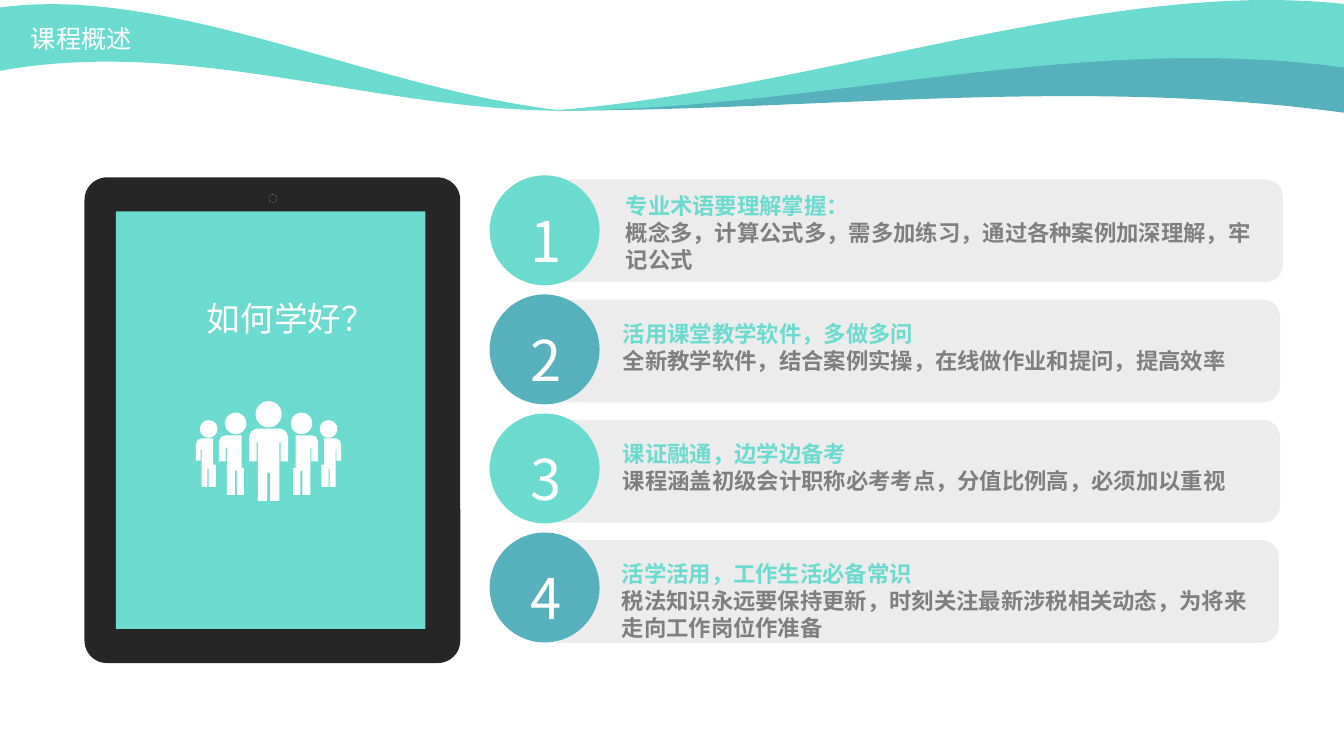
from dataclasses import dataclass
from math import cos, pi, sin

from lxml import etree
from pptx import Presentation
from pptx import util as u
from pptx.dml.color import RGBColor
from pptx.enum import shapes, text
from pptx.oxml.ns import qn


@dataclass(frozen=True)
class Theme:
    font: str = "Noto Sans CJK SC"
    mint: str = "6BDBCF"
    teal: str = "56B1BC"
    dark: str = "262626"
    white: str = "FFFFFF"
    card: str = "D9D9D9"
    grey: str = "7F7F7F"
    title: int = 18
    question: int = 24
    number: int = 40
    body: int = 16


def add_span(para, words, *, font, size, color, bold=False):
    """Add formatted text to a paragraph."""
    span = para.add_run()
    span.text = words
    span.font.name = font
    span.font.size = u.Pt(size)
    span.font.bold = bold
    span.font.color.rgb = RGBColor.from_string(color)
    properties = span.font._element
    etree.SubElement(properties, qn("a:ea")).set("typeface", font)


def bezier(start, first, second, end, steps=40):
    """Points along a cubic curve."""
    weights = [((1 - t) ** 3, 3 * t * (1 - t) ** 2, 3 * t * t * (1 - t), t ** 3)
               for t in (step / steps for step in range(steps + 1))]
    return [tuple(sum(w * point[axis] for w, point in zip(weight, (start, first, second, end)))
                  for axis in (0, 1)) for weight in weights]


def circle(x, y, radius, steps=32):
    angles = [2 * pi * step / steps for step in range(steps)]
    return [(x + radius * cos(a), y + radius * sin(a)) for a in angles]


def mirrored(points):
    return [(-x, y) for x, y in reversed(points)]


class Painter:
    """Draws on one slide; all lengths are centimetres."""

    def __init__(self, slide, theme):
        self.slide, self.theme = slide, theme

    def finish(self, shape, color, alpha=None):
        shape.shadow.inherit = False
        shape.fill.solid()
        shape.fill.fore_color.rgb = RGBColor.from_string(color)
        shape.line.fill.background()
        if alpha is not None:
            for node in shape._element.spPr.iter(qn("a:srgbClr")):
                etree.SubElement(node, qn("a:alpha")).set("val", str(alpha * 1000))

    def preset(self, kind, x, y, width, height, color, alpha=None, corner=None):
        shape = self.slide.shapes.add_shape(
            kind, u.Cm(x), u.Cm(y), u.Cm(width), u.Cm(height))
        if corner is not None:
            shape.adjustments[0] = corner
        self.finish(shape, color, alpha)

    def outline(self, contours, color):
        contours = [[(u.Cm(x), u.Cm(y)) for x, y in points] for points in contours]
        builder = self.slide.shapes.build_freeform(*contours[0][0])
        for index, points in enumerate(contours):
            if index:
                builder.move_to(*points[0])
            builder.add_line_segments(points[1:], close=True)
        self.finish(builder.convert_to_shape(), color)

    def label(self, x, y, width, height, lines, size, bold=False, center=False, spacing=1.27):
        """Lines are pairs of words and colour."""
        box = self.slide.shapes.add_textbox(u.Cm(x), u.Cm(y), u.Cm(width), u.Cm(height))
        frame = box.text_frame
        frame.word_wrap = True
        for index, (words, color) in enumerate(lines):
            para = frame.add_paragraph() if index else frame.paragraphs[0]
            para.line_spacing = u.Pt(size * spacing)
            para.alignment = text.PP_ALIGN.CENTER if center else text.PP_ALIGN.LEFT
            add_span(para, words, font=self.theme.font, size=size, color=color, bold=bold)


THEME = Theme()
KIND = shapes.MSO_SHAPE

# Each wave: colour, upper curve, lower curve
WAVES = [
    (THEME.teal, [(13.94, 2.79), (20.62, 2.26), (27.86, 0.58), (33.87, 1.24)],
     [(33.87, 2.84), (27.18, 1.93), (20.62, 2.79), (13.94, 2.79)]),
    (THEME.mint, [(13.92, 2.79), (20.6, 2.26), (27.86, -0.56), (33.87, 0.1)],
     [(33.87, 1.7), (27.18, 0.79), (20.6, 2.79), (13.92, 2.79)]),
    (THEME.mint, [(14.2, 2.79), (9.37, 2.26), (4.27, -0.43), (-0.08, 0.2)],
     [(-0.08, 1.8), (4.75, 0.89), (9.37, 2.79), (14.2, 2.79)]),
]

# People, as distances from the middle axis of the group
AXIS = 6.77
CENTRE_HALF = [(0.3, 10.8), (0.43, 10.86), (0.49, 11), (0.49, 11.63), (0.3, 11.63),
               (0.3, 11.15), (0.27, 11.15), (0.27, 12.62), (0.04, 12.62), (0.04, 11.91)]
INNER_BODY = [(0.62, 11.79), (0.62, 12.47), (0.8, 12.47), (0.8, 11.86), (0.85, 11.86),
              (0.85, 12.47), (1.05, 12.47), (1.05, 11.28), (1.08, 11.28), (1.08, 11.63),
              (1.25, 11.63), (1.25, 11.13), (1.2, 11.01), (1.08, 10.97), (0.68, 10.97),
              (0.68, 11.79)]
OUTER_BODY = [(1.33, 11.71), (1.33, 12.27), (1.51, 12.27), (1.51, 11.81), (1.54, 11.81),
              (1.54, 12.27), (1.69, 12.27), (1.69, 11.33), (1.71, 11.33), (1.71, 11.61),
              (1.83, 11.61), (1.83, 11.2), (1.79, 11.09), (1.69, 11.05), (1.4, 11.05),
              (1.4, 11.71)]

# Each card: left edge, text top, heading, detail
CARDS = [
    (13.74, 4.72, "专业术语要理解掌握：",
     "概念多，计算公式多，需多加练习，通过各种案例加深理解，牢记公式"),
    (13.67, 7.95, "活用课堂教学软件，多做多问",
     "全新教学软件，结合案例实操，在线做作业和提问，提高效率"),
    (13.67, 10.97, "课证融通，边学边备考",
     "课程涵盖初级会计职称必考考点，分值比例高，必须加以重视"),
    (13.64, 14, "活学活用，工作生活必备常识",
     "税法知识永远要保持更新，时刻关注最新涉税相关动态，为将来走向工作岗位作准备"),
]


def draw_header(painter):
    for color, upper, lower in WAVES:
        painter.outline([bezier(*upper) + bezier(*lower)], color)
    painter.label(0.53, 0.41, 4.8, 1.02, [("课程概述", THEME.white)], THEME.title)


def draw_tablet(painter):
    painter.preset(KIND.ROUNDED_RECTANGLE, 2.13, 4.47, 9.47, 12.24, THEME.dark, corner=0.06)
    for color in (THEME.white, THEME.dark):  # camera rim and lens
        painter.preset(KIND.OVAL, 6.78, 4.9, 0.2, 0.2, color)
    painter.preset(KIND.RECTANGLE, 2.92, 5.33, 7.8, 10.52, THEME.mint)
    side = [INNER_BODY, OUTER_BODY, circle(0.83, 10.67, 0.27), circle(1.51, 10.81, 0.22)]
    people = [circle(0, 10.44, 0.33), CENTRE_HALF + mirrored(CENTRE_HALF)]
    people += side + [mirrored(points) for points in side]
    painter.outline([[(AXIS + x, y) for x, y in points] for points in people], THEME.white)
    painter.label(3.33, 7.32, 8, 1.04, [("如何学好？", THEME.white)],
                  THEME.question, center=True)


def draw_cards(painter):
    for index, (left, text_top, heading, detail) in enumerate(CARDS):
        badge_top = 4.42 + 3 * index
        painter.preset(KIND.ROUNDED_RECTANGLE, left, 4.52 + 3.03 * index, 18.59, 2.59,
                       THEME.card, alpha=48)
        painter.preset(KIND.OVAL, 12.34, badge_top, 2.77, 2.77,
                       THEME.teal if index % 2 else THEME.mint)
        painter.label(12.45, badge_top + 0.56, 2.64, 2.34,
                      [(str(index + 1), THEME.white)], THEME.number, center=True)
        painter.label(left + 1.78, text_top, 16.41, 1.8,
                      [(heading, THEME.mint), (detail, THEME.grey)],
                      THEME.body, bold=True, spacing=1.2)


def main():
    deck = Presentation()
    deck.slide_width, deck.slide_height = u.Cm(33.87), u.Cm(19.05)
    painter = Painter(deck.slides.add_slide(deck.slide_layouts[6]), THEME)
    draw_header(painter)
    draw_tablet(painter)
    draw_cards(painter)
    deck.save("out.pptx")


if __name__ == "__main__":
    main()
